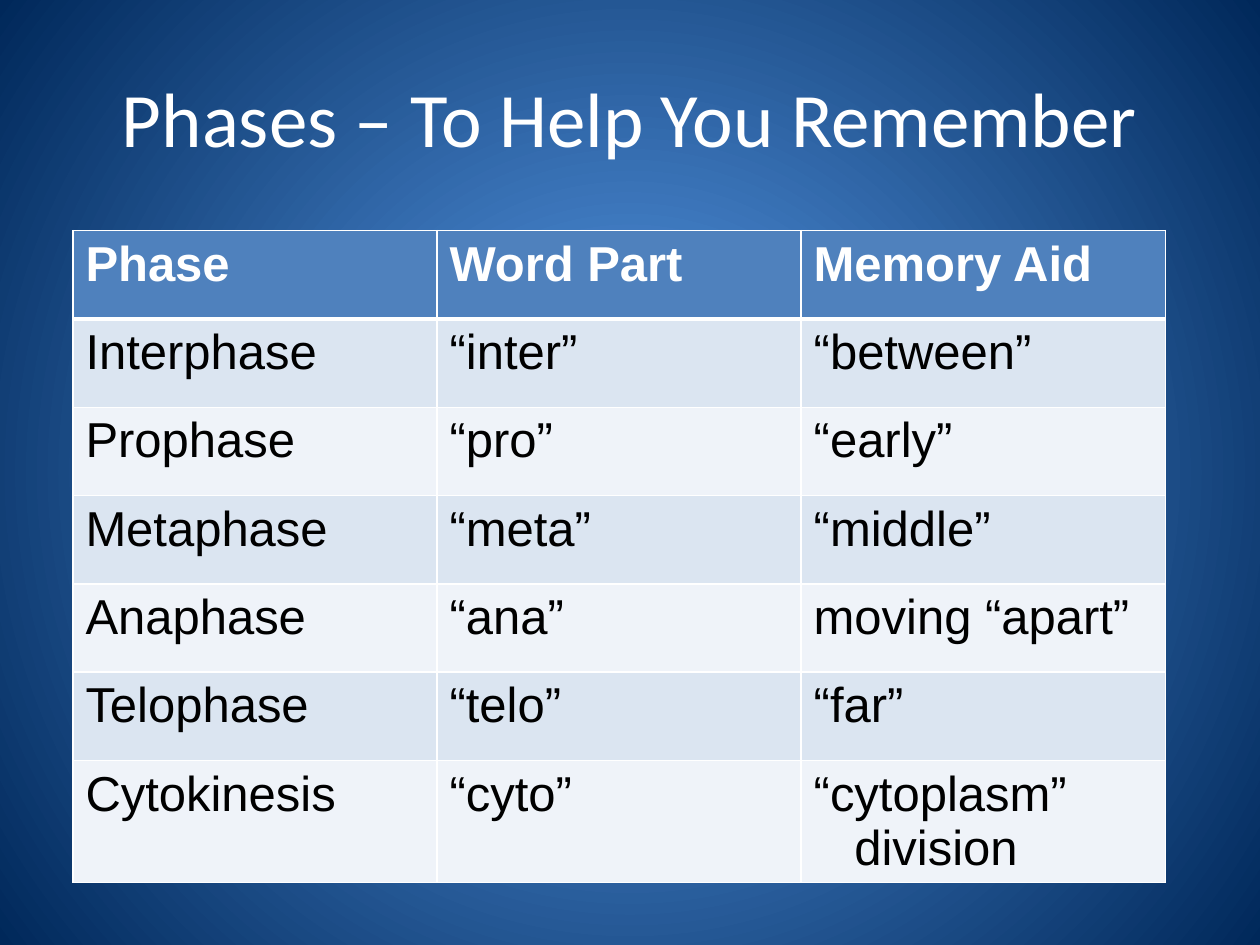
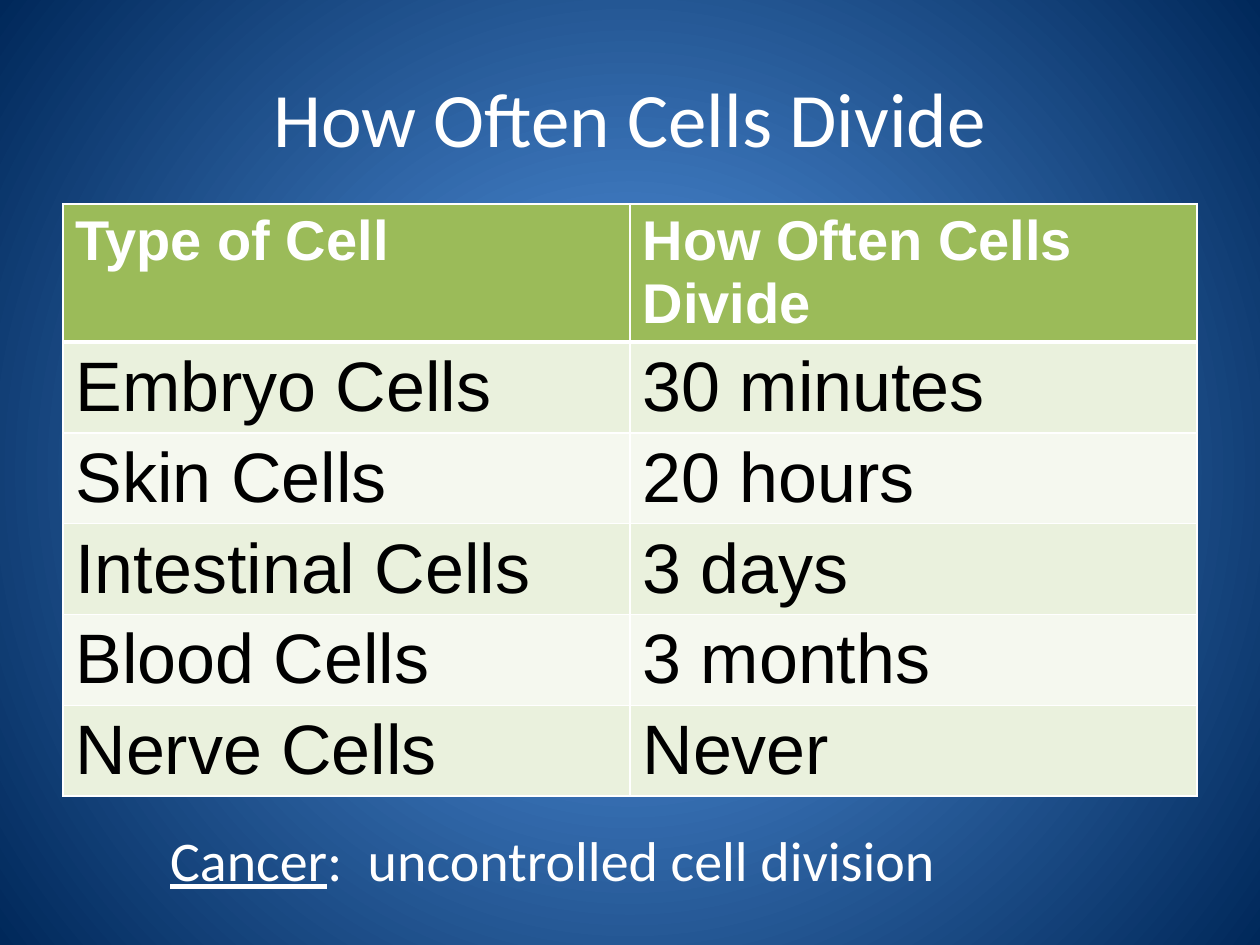
from dataclasses import dataclass

from lxml.etree import SubElement
from pptx import Presentation
from pptx.dml.color import RGBColor as RGB
from pptx.enum.text import MSO_ANCHOR as ANCHOR, PP_ALIGN as ALIGN
from pptx.oxml.ns import qn
from pptx.util import Cm, Pt


@dataclass(frozen=True)
class Theme:
    """Colours, fonts and type sizes shared by the slides."""
    glow: str = "5A9DEB"
    navy: str = "00285A"
    white: str = "FFFFFF"
    black: str = "000000"
    blues: tuple = ("4F81BD", "DBE5F1", "EFF3F9")
    greens: tuple = ("9BBB59", "EAF1DD", "F5F8EF")
    heading_font: str = "Calibri"
    table_font: str = "Arial"
    title_size: int = 44
    note_size: int = 32
    phase_sizes: tuple = (28, 28)
    cell_sizes: tuple = (32, 40)
    thin: int = 1
    thick: int = 3


THEME = Theme()

PHASES = [
    ("Phase", "Word Part", "Memory Aid"),
    ("Interphase", "“inter”", "“between”"),
    ("Prophase", "“pro”", "“early”"),
    ("Metaphase", "“meta”", "“middle”"),
    ("Anaphase", "“ana”", "moving “apart”"),
    ("Telophase", "“telo”", "“far”"),
    ("Cytokinesis", "“cyto”", "“cytoplasm”\ndivision"),
]

DIVISION_RATES = [
    ("Type of Cell", "How Often Cells Divide"),
    ("Embryo Cells", "30 minutes"),
    ("Skin Cells", "20 hours"),
    ("Intestinal Cells", "3 days"),
    ("Blood Cells", "3 months"),
    ("Nerve Cells", "Never"),
]


def add_text(p, text, *, size, font=THEME.heading_font, color=THEME.white,
             bold=False, underline=False):
    """Append a formatted run to a paragraph."""
    r = p.add_run()
    r.text = text
    r.font.name = font
    r.font.size = Pt(size)
    r.font.bold = bold
    r.font.underline = underline
    r.font.color.rgb = RGB.from_string(color)


def set_background(master):
    """Give the master a radial gradient, light in the centre."""
    fill = master.background.fill
    fill.gradient()
    for stop, color in zip(fill.gradient_stops, (THEME.glow, THEME.navy)):
        stop.color.rgb = RGB.from_string(color)
    grad = next(master.element.iter(qn("a:gradFill")))
    grad.remove(grad.find(qn("a:lin")))
    radial = SubElement(grad, qn("a:path"), path="circle")
    SubElement(radial, qn("a:fillToRect"), {side: "50000" for side in "ltrb"})


def add_titled_slide(prs, title):
    """Add a title-only slide with its title formatted."""
    s = prs.slides.add_slide(prs.slide_layouts[5])
    sp = s.shapes.title
    sp.left, sp.top, sp.width, sp.height = Cm(1.27), Cm(0.76), Cm(22.86), Cm(3.18)
    tf = sp.text_frame
    tf.vertical_anchor = ANCHOR.MIDDLE
    p = tf.paragraphs[0]
    p.alignment = ALIGN.CENTER
    add_text(p, title, size=THEME.title_size)
    return s


def set_borders(cell, top, bottom):
    """Draw white lines on the four sides of a cell."""
    tc_pr = cell._tc.get_or_add_tcPr()
    widths = {"L": THEME.thin, "R": THEME.thin, "T": top, "B": bottom}
    for side, width in widths.items():
        line = SubElement(tc_pr, qn(f"a:ln{side}"), w=str(Pt(width)))
        SubElement(SubElement(line, qn("a:solidFill")), qn("a:srgbClr"), val=THEME.white)


def fill_cell(cell, text, background, **fmt):
    """Fill a cell and write its lines, indenting those after the first."""
    cell.fill.solid()
    cell.fill.fore_color.rgb = RGB.from_string(background)
    tf = cell.text_frame
    for i, line in enumerate(text.split("\n")):
        p = tf.add_paragraph() if i else tf.paragraphs[0]
        if i:
            p._p.get_or_add_pPr().set("marL", str(Cm(0.82)))
        add_text(p, line, font=THEME.table_font, **fmt)


def add_banded_table(s, rows, left, top, col_width, row_height, palette, sizes):
    """Add a table with a bold header and two alternating row colours."""
    n_rows, n_cols = len(rows), len(rows[0])
    table = s.shapes.add_table(n_rows, n_cols, left, top,
                               col_width * n_cols, row_height * n_rows).table
    header, *bands = palette
    header_size, body_size = sizes
    for i, row in enumerate(rows):
        if i == 0:
            background, fmt = header, dict(size=header_size, bold=True)
        else:
            background, fmt = bands[(i - 1) % 2], dict(size=body_size, color=THEME.black)
        for j, text in enumerate(row):
            cell = table.cell(i, j)
            set_borders(cell, top=THEME.thick if i == 1 else THEME.thin,
                        bottom=THEME.thick if i == 0 else THEME.thin)
            fill_cell(cell, text, background, **fmt)


def add_definition(s, term, meaning):
    """Add a line of text with its term underlined."""
    tf = s.shapes.add_textbox(Cm(3.18), Cm(16.51), Cm(19.05), Cm(1.63)).text_frame
    tf.word_wrap = True
    p = tf.paragraphs[0]
    add_text(p, term, size=THEME.note_size, underline=True)
    add_text(p, meaning, size=THEME.note_size)


def main():
    """Build both slides and save the deck."""
    prs = Presentation()
    prs.slide_width, prs.slide_height = Cm(25.4), Cm(19.05)
    set_background(prs.slide_master)

    s = add_titled_slide(prs, "Phases – To Help You Remember")
    add_banded_table(s, PHASES, Cm(1.47), Cm(4.65), Cm(7.34), Cm(1.78),
                     THEME.blues, THEME.phase_sizes)

    s = add_titled_slide(prs, "How Often Cells Divide")
    add_banded_table(s, DIVISION_RATES, Cm(1.27), Cm(4.11), Cm(11.43), Cm(1.04),
                     THEME.greens, THEME.cell_sizes)
    add_definition(s, "Cancer", ":  uncontrolled cell division")

    prs.save("out.pptx")


if __name__ == "__main__":
    main()
